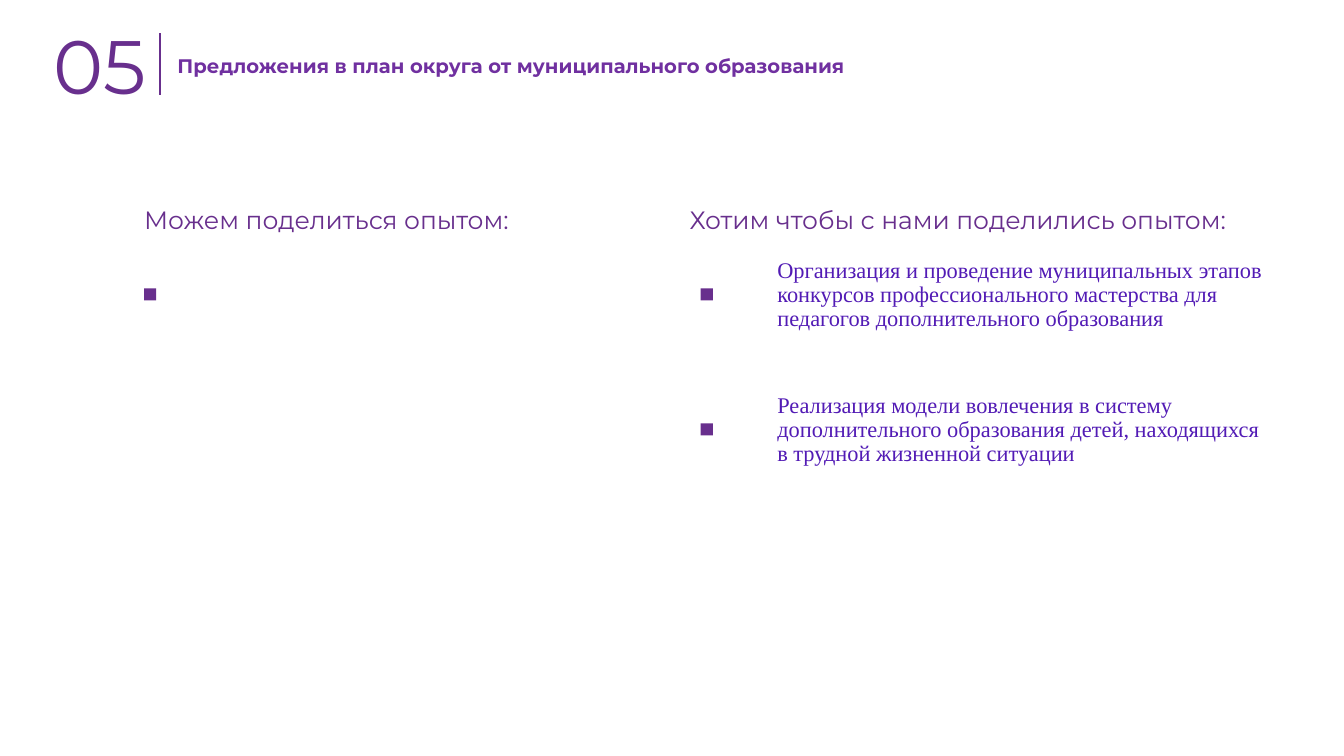
import pptx
import pptx.util
import pptx.dml.color
import pptx.enum.shapes
import pptx.enum.text
import pptx.oxml.ns
import lxml.etree

COLORS = {"plum": "682F8D", "title": "7030A0", "violet": "521BB5"}
WIDTH, HEIGHT = 13.33, 7.5
NUMBER = "05"
TITLE = "Предложения в план округа от муниципального образования"
SHARE = "Можем поделиться опытом:"
LEARN = "Хотим чтобы с нами поделились опытом:"
WISHES = [
    "Организация и проведение муниципальных этапов конкурсов профессионального мастерства для педагогов дополнительного образования",
    "Реализация модели вовлечения в систему дополнительного образования детей, находящихся в трудной жизненной ситуации",
]
HEADING_TOP, HEADING_HEIGHT = 2.02, 0.31
WISH_TOP, WISH_STEP = 2.52, 1.34
MARKER_SIZE, MARKER_DROP = 0.12, 0.34
SHARE_MARKER_LEFT, LEARN_MARKER_LEFT = 1.43, 6.95
TIGHT, ROOMY = (0, 0.01, 0, 0), (0.1, 0.05, 0.1, 0.05)

FORMATS = {
    "number": {"name": "Montserrat", "size": 54, "bold": False, "color": "plum"},
    "title": {"name": "Montserrat", "size": 14, "bold": True, "color": "title"},
    "heading": {"name": "Montserrat", "size": 17.9, "bold": False, "color": "plum"},
    "wish": {"name": "Times New Roman", "size": 16, "bold": False, "color": "violet"},
}


def rgb(name):
    return pptx.dml.color.RGBColor.from_string(COLORS[name])


def place(box, area):
    for side, length in zip(("left", "top", "width", "height"), area):
        setattr(box, side, pptx.util.Inches(length))


def write(box, area, text, style, margins=TIGHT, line_spacing=1.0):
    place(box, area)
    frame = box.text_frame
    frame.word_wrap = True
    frame.auto_size = pptx.enum.text.MSO_AUTO_SIZE.NONE
    frame.vertical_anchor = pptx.enum.text.MSO_ANCHOR.TOP
    for side, length in zip(("left", "top", "right", "bottom"), margins):
        setattr(frame, "margin_" + side, pptx.util.Inches(length))
    para = frame.paragraphs[0]
    properties = para._p.get_or_add_pPr()
    properties.set("marL", "0")
    properties.set("indent", "0")
    lxml.etree.SubElement(properties, pptx.oxml.ns.qn("a:buNone"))
    layout = {
        "alignment": pptx.enum.text.PP_ALIGN.LEFT,
        "line_spacing": line_spacing,
        "space_before": pptx.util.Pt(0),
    }
    for key, value in layout.items():
        setattr(para, key, value)
    span = para.add_run()
    span.text = text
    look = dict(FORMATS[style])
    span.font.color.rgb = rgb(look.pop("color"))
    look["size"] = pptx.util.Pt(look["size"])
    for key, value in look.items():
        setattr(span.font, key, value)


def add_marker(page, left, top):
    area = [pptx.util.Inches(n) for n in (left, top, MARKER_SIZE, MARKER_SIZE)]
    marker = page.shapes.add_shape(pptx.enum.shapes.MSO_SHAPE.RECTANGLE, *area)
    marker.shadow.inherit = False
    marker.fill.solid()
    marker.fill.fore_color.rgb = rgb("plum")
    marker.line.fill.background()


def add_divider(page, left, top, bottom):
    ends = [pptx.util.Inches(n) for n in (left, top, left, bottom)]
    divider = page.shapes.add_connector(pptx.enum.shapes.MSO_CONNECTOR.STRAIGHT, *ends)
    divider.line.color.rgb = rgb("plum")
    divider.line.width = pptx.util.Pt(1.42)
    lxml.etree.SubElement(divider._element.spPr, pptx.oxml.ns.qn("a:effectLst"))


def main():
    deck = pptx.Presentation()
    deck.slide_width = pptx.util.Inches(WIDTH)
    deck.slide_height = pptx.util.Inches(HEIGHT)
    page = deck.slides.add_slide(deck.slide_layouts.get_by_name("Comparison"))
    title, share, first_wish, learn, second_wish = list(page.placeholders)[:5]

    number = page.shapes.add_textbox(0, 0, 0, 0)
    write(number, (0.53, 0.18, 1.03, 0.92), NUMBER, "number")
    add_divider(page, 1.59, 0.33, 0.94)
    write(title, (1.76, 0.52, 8.67, 0.24), TITLE, "title")

    write(share, (1.43, HEADING_TOP, 4.12, HEADING_HEIGHT), SHARE, "heading")
    write(learn, (6.84, HEADING_TOP, 5.89, HEADING_HEIGHT), LEARN, "heading")

    add_marker(page, SHARE_MARKER_LEFT, WISH_TOP + MARKER_DROP)
    for row, (box, wish) in enumerate(zip((first_wish, second_wish), WISHES)):
        top = WISH_TOP + row * WISH_STEP
        write(box, (7.61, top, 5.12, 0.91), wish, "wish", ROOMY, 0.9)
        add_marker(page, LEARN_MARKER_LEFT, top + MARKER_DROP)

    deck.save("out.pptx")


if __name__ == "__main__":
    main()
